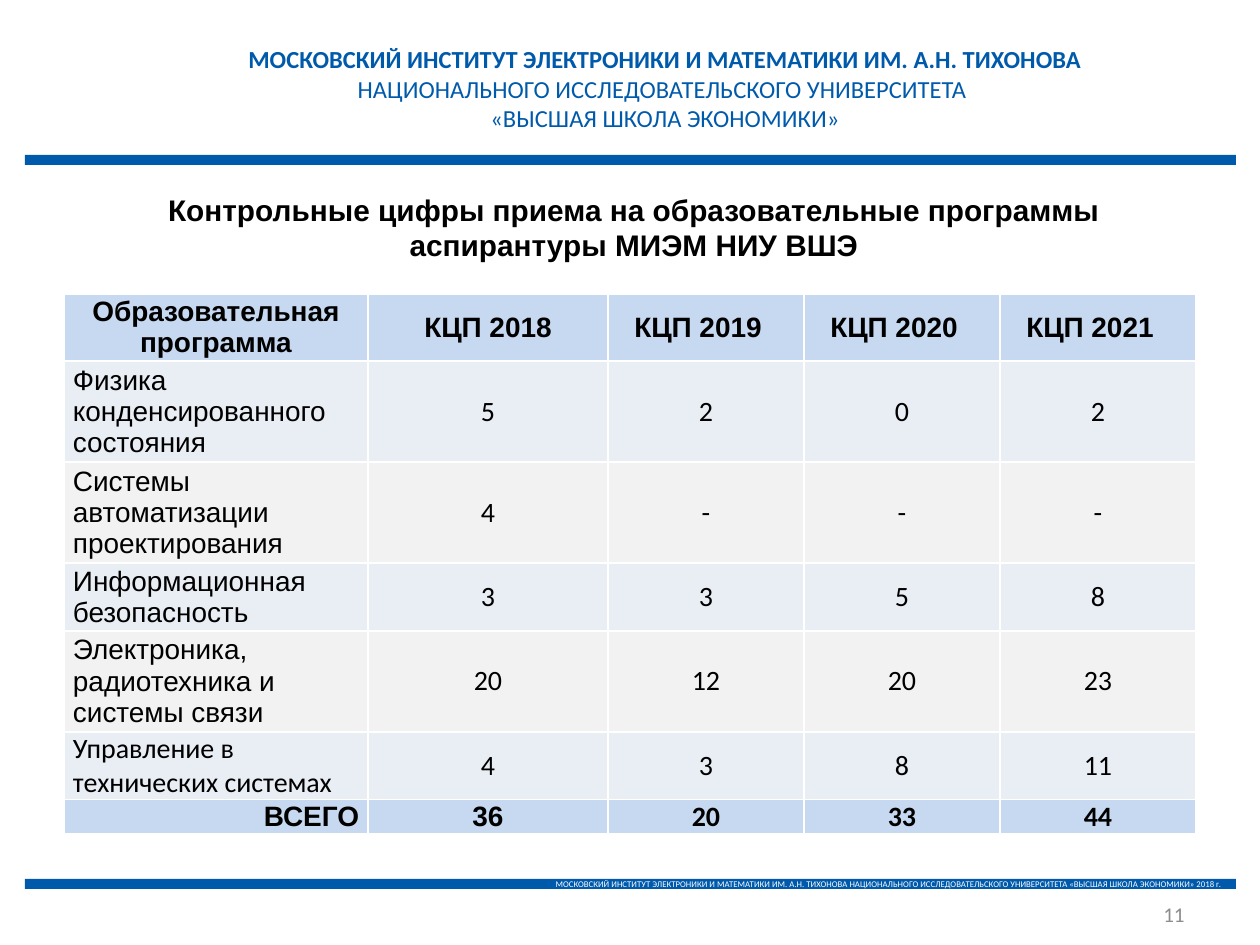
from dataclasses import dataclass

from lxml.etree import SubElement
from pptx import Presentation
from pptx.dml.color import RGBColor
from pptx.enum.shapes import MSO_SHAPE
from pptx.enum.text import MSO_ANCHOR, PP_ALIGN
from pptx.oxml.ns import qn
from pptx.util import Emu, Pt

EMU_PER_PX = 914400 / 126
COLORS = {
    "blue": "005AAB",
    "white": "FFFFFF",
    "black": "000000",
    "gray": "8C8C8C",
    "heading": "C6D9F1",
    "odd": "E9EDF4",
    "even": "F2F2F2",
}


@dataclass(frozen=True)
class Box:
    left: int
    top: int
    width: int
    height: int


@dataclass(frozen=True)
class Style:
    size: int
    font: str = "Calibri"
    color: str = "black"
    bold: bool = False
    align: PP_ALIGN = PP_ALIGN.CENTER


@dataclass(frozen=True)
class Program:
    title: str
    quotas: tuple[str, ...]
    height: int
    fill: str
    title_font: str = "Arial"
    title_align: PP_ALIGN = PP_ALIGN.LEFT
    quota_fonts: tuple[str, ...] = ("Calibri",) * 4
    bold: bool = False


COLUMN_WIDTHS = (304, 240, 196, 196, 196)
TABLE_LEFT, TABLE_TOP = 64, 294
SIDE_INSET = 9
YEAR_INSET = 16
PROGRAMS = (
    Program("Образовательная программа",
            tuple(f"КЦП {year}" for year in range(2018, 2022)), 67, "heading",
            title_align=PP_ALIGN.CENTER, quota_fonts=("Arial",) * 4, bold=True),
    Program("Физика конденсированного состояния", ("5", "2", "0", "2"), 101, "odd"),
    Program("Системы автоматизации проектирования", ("4", "-", "-", "-"), 100, "even"),
    Program("Информационная безопасность", ("3", "3", "5", "8"), 68, "odd"),
    Program("Электроника, радиотехника и системы связи",
            ("20", "12", "20", "23"), 100, "even"),
    Program("Управление в технических системах", ("4", "3", "8", "11"), 68, "odd",
            title_font="Calibri"),
    Program("ВСЕГО", ("36", "20", "33", "44"), 33, "heading",
            title_align=PP_ALIGN.RIGHT,
            quota_fonts=("Arial", "Calibri", "Calibri", "Calibri"), bold=True),
)


def px(length: int) -> Emu:
    return Emu(round(length * EMU_PER_PX))


def rgb(name: str) -> RGBColor:
    return RGBColor.from_string(COLORS[name])


def place(box: Box) -> tuple[Emu, ...]:
    return px(box.left), px(box.top), px(box.width), px(box.height)


def style_paragraph(paragraph, style: Style) -> None:
    paragraph.alignment = style.align
    for run in paragraph.runs:
        run.font.size = Pt(style.size)
        run.font.name = style.font
        run.font.bold = style.bold
        run.font.color.rgb = rgb(style.color)


def write(frame, text: str, *styles: Style) -> None:
    frame.text = text
    for paragraph, style in zip(frame.paragraphs, styles):
        style_paragraph(paragraph, style)


def add_bar(slide, box: Box):
    bar = slide.shapes.add_shape(MSO_SHAPE.RECTANGLE, *place(box))
    bar.shadow.inherit = False
    bar.fill.solid()
    bar.fill.fore_color.rgb = rgb("blue")
    bar.line.fill.background()
    return bar


def add_text(slide, box: Box, text: str, *styles: Style,
             anchor: MSO_ANCHOR = MSO_ANCHOR.TOP) -> None:
    frame = slide.shapes.add_textbox(*place(box)).text_frame
    frame.word_wrap = True
    frame.vertical_anchor = anchor
    write(frame, text, *styles)


def add_borders(cell) -> None:
    properties = cell._tc.get_or_add_tcPr()
    for side in ("a:lnL", "a:lnR", "a:lnT", "a:lnB"):
        line = SubElement(properties, qn(side), w=str(Pt(1)))
        fill = SubElement(line, qn("a:solidFill"))
        SubElement(fill, qn("a:srgbClr"), val=COLORS["white"])


def fill_cell(cell, text: str, fill: str, style: Style, left: int, right: int) -> None:
    add_borders(cell)
    cell.fill.solid()
    cell.fill.fore_color.rgb = rgb(fill)
    cell.vertical_anchor = MSO_ANCHOR.MIDDLE
    cell.margin_left, cell.margin_right = px(left), px(right)
    cell.margin_top = cell.margin_bottom = 0
    write(cell.text_frame, text, style)


def add_quota_table(slide) -> None:
    box = Box(TABLE_LEFT, TABLE_TOP, sum(COLUMN_WIDTHS),
              sum(program.height for program in PROGRAMS))
    table = slide.shapes.add_table(
        len(PROGRAMS), len(COLUMN_WIDTHS), *place(box)).table
    table.first_row = table.horz_banding = False
    for column, width in zip(table.columns, COLUMN_WIDTHS):
        column.width = px(width)
    for row_index, program in enumerate(PROGRAMS):
        table.rows[row_index].height = px(program.height)
        texts = (program.title, *program.quotas)
        fonts = (program.title_font, *program.quota_fonts)
        for column_index, (text, font) in enumerate(zip(texts, fonts)):
            align = PP_ALIGN.CENTER if column_index else program.title_align
            left = right = SIDE_INSET if column_index < 2 else 0
            if row_index == 0 and column_index >= 2:
                right = YEAR_INSET
            fill_cell(table.cell(row_index, column_index), text, program.fill,
                      Style(16, font, bold=program.bold, align=align), left, right)


def main() -> None:
    presentation = Presentation()
    presentation.slide_width, presentation.slide_height = px(1260), px(945)
    slide = presentation.slides.add_slide(presentation.slide_layouts[6])

    footer_bar = add_bar(slide, Box(25, 879, 1211, 10))
    footer_bar.text_frame.word_wrap = True
    footer_bar.text_frame.vertical_anchor = MSO_ANCHOR.MIDDLE
    write(footer_bar.text_frame,
          "МОСКОВСКИЙ ИНСТИТУТ ЭЛЕКТРОНИКИ И МАТЕМАТИКИ ИМ. А.Н. ТИХОНОВА "
          "НАЦИОНАЛЬНОГО ИССЛЕДОВАТЕЛЬСКОГО УНИВЕРСИТЕТА "
          "«ВЫСШАЯ ШКОЛА ЭКОНОМИКИ» 2018 г.",
          Style(5, color="white", align=PP_ALIGN.RIGHT))
    add_bar(slide, Box(25, 155, 1211, 10))
    add_text(slide, Box(234, 38, 862, 102),
             "МОСКОВСКИЙ ИНСТИТУТ ЭЛЕКТРОНИКИ И МАТЕМАТИКИ ИМ. А.Н. ТИХОНОВА\n"
             "НАЦИОНАЛЬНОГО ИССЛЕДОВАТЕЛЬСКОГО УНИВЕРСИТЕТА \v"
             "«ВЫСШАЯ ШКОЛА ЭКОНОМИКИ»",
             Style(14, color="blue", bold=True), Style(14, color="blue"))
    add_quota_table(slide)
    add_text(slide, Box(903, 900, 294, 28), "11",
             Style(12, color="gray", align=PP_ALIGN.RIGHT), anchor=MSO_ANCHOR.MIDDLE)
    add_text(slide, Box(54, 185, 1160, 84),
             "Контрольные цифры приема на образовательные программы "
             "аспирантуры МИЭМ НИУ ВШЭ",
             Style(17, "Arial", bold=True), anchor=MSO_ANCHOR.MIDDLE)
    presentation.save("out.pptx")


if __name__ == "__main__":
    main()
